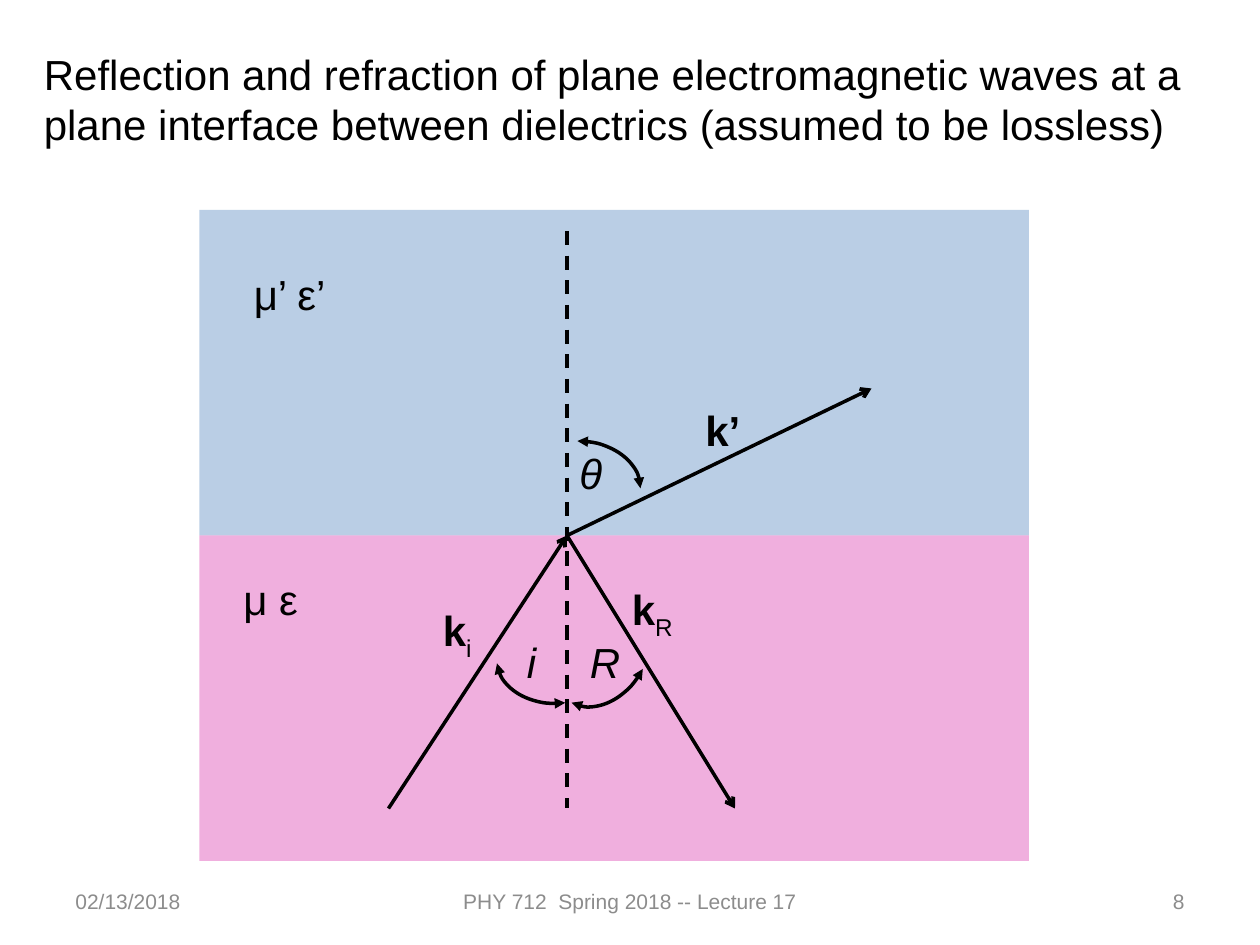
"""Build a slide on reflection and refraction at a plane dielectric interface."""
from lxml.etree import SubElement
from pptx import Presentation
from pptx.dml.color import RGBColor
from pptx.enum.dml import MSO_LINE
from pptx.enum.shapes import MSO_CONNECTOR, MSO_SHAPE
from pptx.enum.text import MSO_ANCHOR, MSO_AUTO_SIZE, PP_ALIGN
from pptx.oxml.ns import qn
from pptx.util import Pt

COLORS = {"ink": "000000", "footer": "8C8C8C", "upper": "4F81BD", "lower": "DA32AA"}
OPACITY = 39
LINE_WIDTH = 2

TITLE = ("Reflection and refraction of plane electromagnetic waves at a "
         "plane interface between dielectrics (assumed to be lossless)")
FOOTERS = [
    ("02/13/2018", 36, 168, PP_ALIGN.LEFT),
    ("PHY 712  Spring 2018 -- Lecture 17", 246, 228, PP_ALIGN.CENTER),
    ("8", 516, 168, PP_ALIGN.RIGHT),
]

MEDIA = ["upper", "lower"]
MEDIUM_LEFT, MEDIUM_TOP, MEDIUM_WIDTH, MEDIUM_HEIGHT = 114, 120, 474, 186
ORIGIN = (324, MEDIUM_TOP + MEDIUM_HEIGHT)
RAYS = [
    ((222, 462), ORIGIN),
    (ORIGIN, (420, 462)),
    (ORIGIN, (498, 222)),
]
NORMAL = ((324, 132), (324, 462))
LABELS = [
    ("μ’ ε’", "", "plain", 138, 150, 102),
    ("μ ε", "", "plain", 132, 324, 102),
    ("k’", "", "bold", 396, 227.5, 60),
    ("k", "i", "bold", 246, 342, 60),
    ("k", "R", "bold", 354, 330, 60),
    ("i", "", "italic", 294, 360, 30),
    ("R", "", "italic", 330, 360, 30),
    ("θ", "", "italic", 324, 252, 30),
]
ARC_SIZE = (72, 54)
ARCS = [(294, 252, 0), (283.7, 347.8, 173.1), (307.4, 342.7, 117.8)]


def color(name):
    return RGBColor.from_string(COLORS[name])


def style_span(span, size, ink="ink"):
    span.font.name = "Arial"
    span.font.size = Pt(size)
    span.font.color.rgb = color(ink)


def add_text(shapes, text, left, top, width, height, size, ink="ink"):
    box = shapes.add_textbox(Pt(left), Pt(top), Pt(width), Pt(height))
    frame = box.text_frame
    frame.word_wrap = True
    frame.text = text
    style_span(frame.paragraphs[0].runs[0], size, ink)
    return frame


def add_label(shapes, text, subscript, style, left, top, width):
    frame = add_text(shapes, text, left, top, width, 36, 24)
    frame.auto_size = MSO_AUTO_SIZE.SHAPE_TO_FIT_TEXT
    para = frame.paragraphs[0]
    para.runs[0].font.bold = style == "bold"
    para.runs[0].font.italic = style == "italic"
    if subscript:
        span = para.add_run()
        span.text = subscript
        style_span(span, 24)
        span.font.bold = False
        span.font._element.set("baseline", "-25000")


def add_medium(shapes, name, row):
    medium = shapes.add_shape(
        MSO_SHAPE.RECTANGLE, Pt(MEDIUM_LEFT), Pt(MEDIUM_TOP + row * MEDIUM_HEIGHT),
        Pt(MEDIUM_WIDTH), Pt(MEDIUM_HEIGHT))
    medium.shadow.inherit = False
    medium.line.fill.background()
    medium.fill.solid()
    medium.fill.fore_color.rgb = color(name)
    fill_color = medium._element.spPr.find(qn("a:solidFill"))[0]
    SubElement(fill_color, qn("a:alpha")).set("val", str(OPACITY * 1000))


def style_line(shape, **ends):
    shape.line.color.rgb = color("ink")
    shape.line.width = Pt(LINE_WIDTH)
    outline = shape._element.spPr.find(qn("a:ln"))
    for end, kind in ends.items():
        SubElement(outline, qn(f"a:{end}")).set("type", kind)


def add_line(shapes, start, stop, **ends):
    line = shapes.add_connector(
        MSO_CONNECTOR.STRAIGHT, *(Pt(value) for value in start + stop))
    style_line(line, **ends)
    SubElement(line._element.spPr, qn("a:effectLst"))
    return line


def add_arc(shapes, left, top, rotation):
    width, height = ARC_SIZE
    arc = shapes.add_shape(MSO_SHAPE.ARC, Pt(left), Pt(top), Pt(width), Pt(height))
    arc.shadow.inherit = False
    arc.rotation = rotation
    arc.fill.background()
    style_line(arc, headEnd="triangle", tailEnd="triangle")


def main():
    deck = Presentation()
    deck.slide_width, deck.slide_height = Pt(720), Pt(540)
    page = deck.slides.add_slide(deck.slide_layouts[6])

    for text, left, width, alignment in FOOTERS:
        frame = add_text(page.shapes, text, left, 500.4, width, 28.8, 12, "footer")
        frame.vertical_anchor = MSO_ANCHOR.MIDDLE
        frame.paragraphs[0].alignment = alignment
    title = add_text(page.shapes, TITLE, 18, 24, 678, 65.5, 24)
    title.auto_size = MSO_AUTO_SIZE.SHAPE_TO_FIT_TEXT

    diagram = page.shapes.add_group_shape().shapes
    for row, name in enumerate(MEDIA):
        add_medium(diagram, name, row)
    for start, stop in RAYS:
        add_line(diagram, start, stop, tailEnd="arrow")
    add_line(diagram, *NORMAL).line.dash_style = MSO_LINE.DASH
    for label in LABELS:
        add_label(diagram, *label)
    for arc in ARCS:
        add_arc(diagram, *arc)

    deck.save("out.pptx")


if __name__ == "__main__":
    main()
